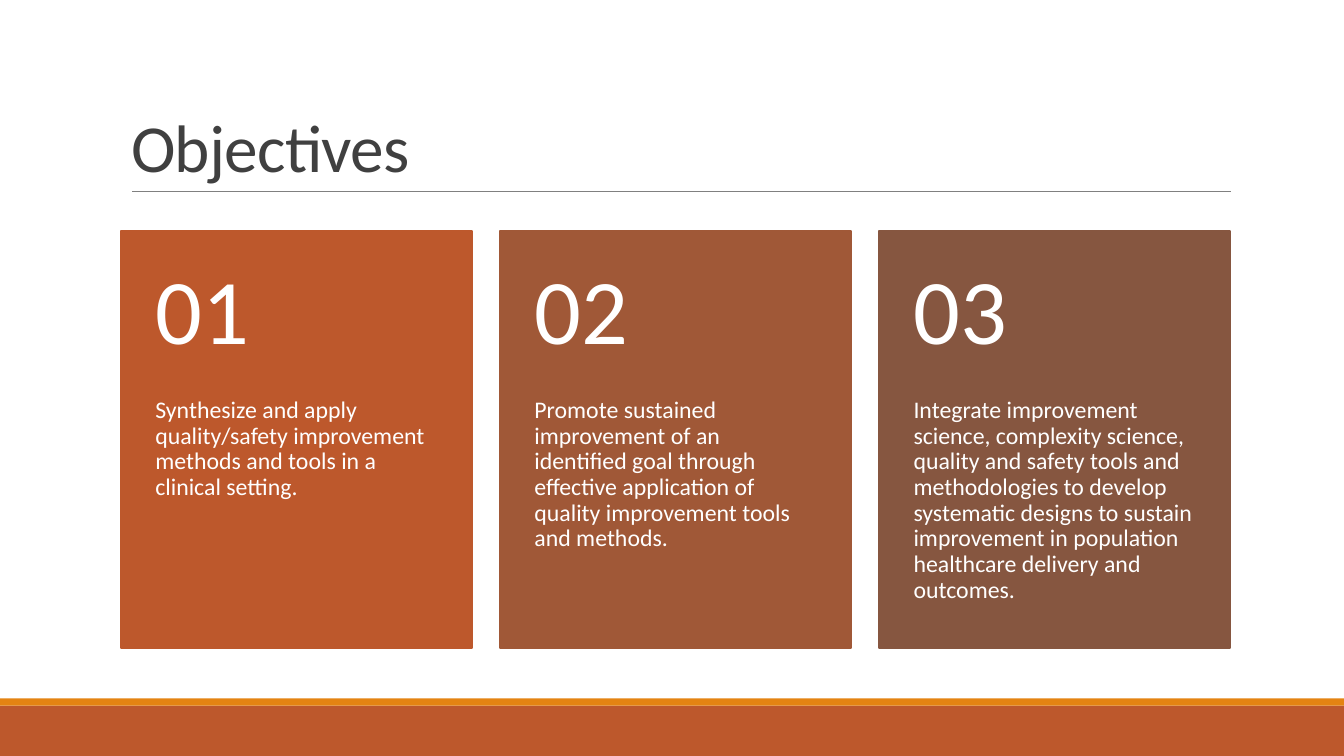
from pptx import Presentation
from pptx import util as u
from pptx.dml.color import RGBColor
from pptx.enum import shapes, text
from pptx.oxml import parse_xml
from pptx.oxml.ns import nsdecls

COLORS = {
    "rust": "BD582C", "amber": "E48312", "sienna": "A05837", "umber": "865640",
    "ink": "404040", "rule": "808080", "white": "FFFFFF",
}
FONT = "Calibri"
GOALS = [
    ("rust", "Synthesize and apply quality/safety improvement methods and tools "
             "in a clinical setting."),
    ("sienna", "Promote sustained improvement of an identified goal through "
               "effective application of quality improvement tools and methods."),
    ("umber", "Integrate improvement science, complexity science, quality and "
              "safety tools and methodologies to develop systematic designs to "
              "sustain improvement in population healthcare delivery and outcomes."),
]


def color(name):
    return RGBColor.from_string(COLORS[name])


def inches(*sizes):
    return [u.Inches(size) for size in sizes]


def add_rect(slide, box, fill, edge=0):
    rect = slide.shapes.add_shape(shapes.MSO_SHAPE.RECTANGLE, *inches(*box))
    rect.shadow.inherit = False
    rect.fill.solid()
    rect.fill.fore_color.rgb = color(fill)
    if edge:
        rect.line.color.rgb = color(fill)
        rect.line.width = u.Pt(edge)
    else:
        rect.line.fill.background()


def set_text(frame, words, size, ink, anchor, insets, spacing, after=0):
    frame.word_wrap = True
    frame.auto_size = text.MSO_AUTO_SIZE.NONE
    frame.vertical_anchor = anchor
    (frame.margin_left, frame.margin_top,
     frame.margin_right, frame.margin_bottom) = inches(*insets)
    para = frame.paragraphs[0]
    para.alignment = text.PP_ALIGN.LEFT
    para.line_spacing = spacing
    para.space_after = u.Pt(after)
    run = para.add_run()
    run.text = words
    run.font.name = FONT
    run.font.size = u.Pt(size)
    run.font.color.rgb = color(ink)
    return run


def add_footer(slide, box):
    left, top, width, height = box
    stripe = 0.07
    add_rect(slide, (left, top + stripe, width, height - stripe), "rust")
    add_rect(slide, (left, top, width, stripe), "amber")


def add_title(slide, box):
    left, top, width, height = box
    title = slide.shapes.title
    title.left, title.top, title.width, title.height = inches(*box)
    run = set_text(title.text_frame, "Objectives", 48, "ink",
                   text.MSO_ANCHOR.BOTTOM, (0.1, 0.05, 0.1, 0.05), 0.85)
    run.font._element.set("spc", "-50")

    # Rule below the title
    base = top + height
    rule = slide.shapes.add_connector(
        shapes.MSO_CONNECTOR.STRAIGHT,
        *inches(left + 0.11, base, left + width + 0.01, base))
    rule.line.color.rgb = color("rule")
    rule.line.width = u.Pt(0.5)
    rule._element.spPr.append(parse_xml(f"<a:effectLst {nsdecls('a')}/>"))


def add_card(slide, box, number, goal, fill):
    left, top, width, height = box
    head = height * 0.4
    add_rect(slide, box, fill, edge=1.25)
    parts = [
        (top, head, f"{number:02}", 66, text.MSO_ANCHOR.MIDDLE, 0.18, 0.18),
        (top + head, height - head, goal, 17, text.MSO_ANCHOR.TOP, 0, 0.36),
    ]
    for y, tall, words, size, anchor, above, below in parts:
        label = slide.shapes.add_textbox(*inches(left, y, width, tall))
        set_text(label.text_frame, words, size, "white", anchor,
                 (0.34, above, 0.34, below), 0.9, after=size * 0.35)


def add_cards(slide, box):
    left, top, width, height = box
    gap = 0.28
    wide = (width - gap * (len(GOALS) - 1)) / len(GOALS)
    for i, (fill, goal) in enumerate(GOALS):
        card = (left + i * (wide + gap), top, wide, height)
        add_card(slide, card, i + 1, goal, fill)


def main():
    deck = Presentation()
    deck.slide_width, deck.slide_height = inches(13.33, 7.5)
    slide = deck.slides.add_slide(deck.slide_layouts[5])
    add_footer(slide, (0, 6.93, 13.33, 0.57))
    add_title(slide, (1.2, 0.31, 11, 1.59))
    add_cards(slide, (1.2, 2.29, 11, 4.14))
    deck.save("out.pptx")


if __name__ == "__main__":
    main()
